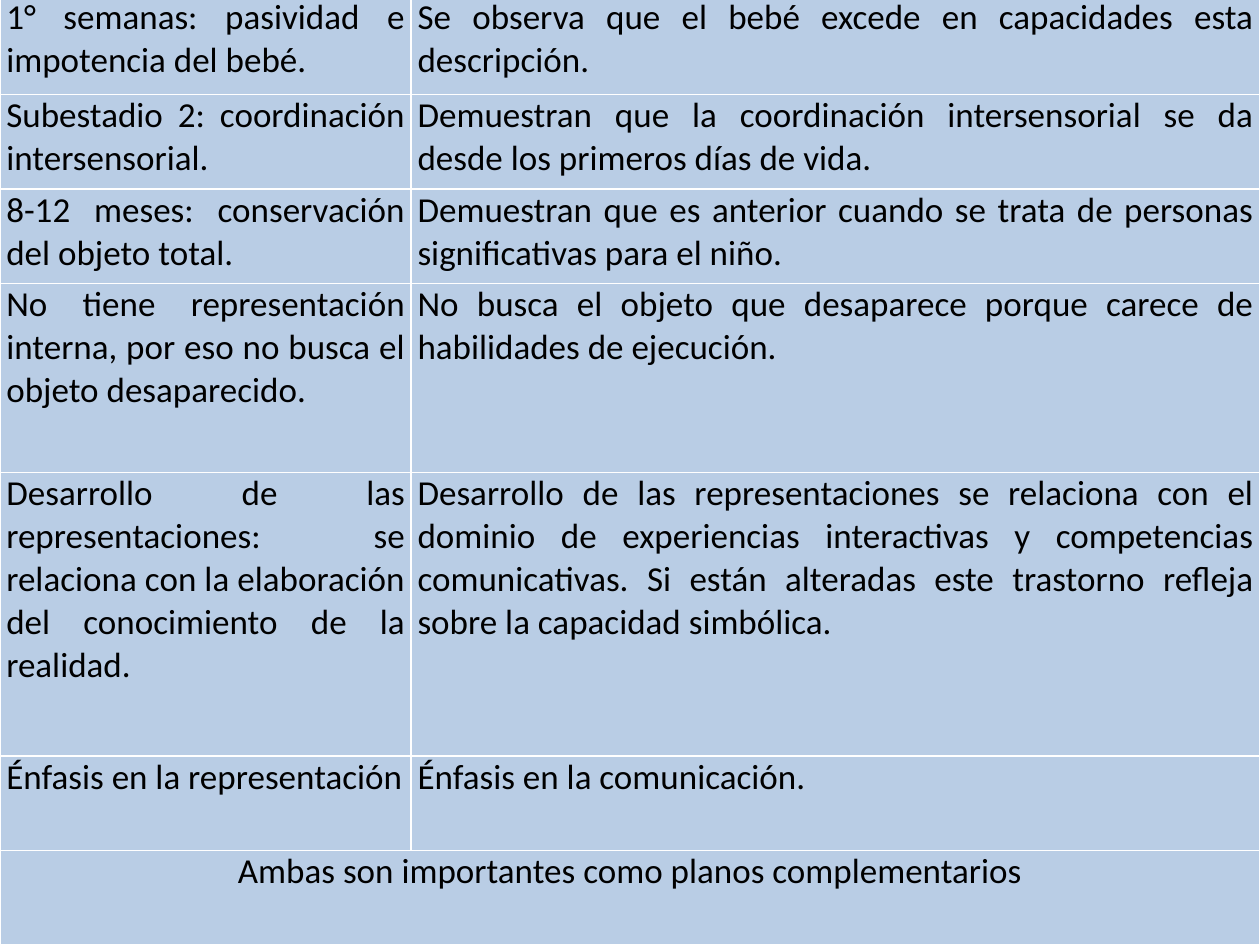
import pptx
import pptx.util
import pptx.dml.color
import pptx.enum.text
import pptx.oxml
import pptx.oxml.ns

Pt = pptx.util.Pt
Align = pptx.enum.text.PP_ALIGN

# Content: (left text, right text, height in row units)
COMPARISON = [
    ("1° semanas: pasividad e impotencia del bebé.",
     "Se observa que el bebé excede en capacidades esta descripción.", 1),
    ("Subestadio 2: coordinación intersensorial.",
     "Demuestran que la coordinación intersensorial se da desde los primeros días de vida.", 1),
    ("8-12 meses: conservación del objeto total.",
     "Demuestran que es anterior cuando se trata de personas significativas para el niño.", 1),
    ("No tiene representación interna, por eso no busca el objeto desaparecido.",
     "No busca el objeto que desaparece porque carece de habilidades de ejecución.", 2),
    ("Desarrollo de las representaciones: se relaciona con la elaboración del "
     "conocimiento de la realidad.",
     "Desarrollo de las representaciones se relaciona con el dominio de experiencias "
     "interactivas y competencias comunicativas. Si están alteradas este trastorno "
     "refleja sobre la capacidad simbólica.", 3),
    ("Énfasis en la representación", "Énfasis en la comunicación.", 1),
]
CONCLUSION = "Ambas son importantes como planos complementarios"

THEME = {"font": "Calibri", "size": 20, "text": "000000",
         "fill": "B9CDE5", "border": "FFFFFF", "border_width": 1}

# Layout in points
PAGE_WIDTH, PAGE_HEIGHT = 720, 540
OVERHANG = 2  # the first row starts this far above the page
ROW_UNIT = 54
LEFT_COLUMN = 235
CELL_FORMAT = {"margin_left": Pt(3.6), "margin_right": Pt(3.6),
               "margin_top": 0, "margin_bottom": 0}


def color(name):
    return pptx.dml.color.RGBColor.from_string(THEME[name])


def add_borders(cell):
    properties = cell._tc.get_or_add_tcPr()
    for position, side in enumerate(("lnL", "lnR", "lnT", "lnB")):
        line = pptx.oxml.parse_xml(
            f'<a:{side} {pptx.oxml.ns.nsdecls("a")} w="{Pt(THEME["border_width"])}">'
            f'<a:solidFill><a:srgbClr val="{THEME["border"]}"/></a:solidFill></a:{side}>')
        properties.insert(position, line)


def format_cell(cell):
    for name, value in CELL_FORMAT.items():
        setattr(cell, name, value)
    cell.fill.solid()
    cell.fill.fore_color.rgb = color("fill")
    add_borders(cell)


def write_cell(cell, text, alignment):
    para = cell.text_frame.paragraphs[0]
    para.alignment = alignment
    span = para.add_run()
    span.text = text
    font_format = {"name": THEME["font"], "size": Pt(THEME["size"]), "bold": False}
    for name, value in font_format.items():
        setattr(span.font, name, value)
    span.font.color.rgb = color("text")


def main():
    deck = pptx.Presentation()
    deck.slide_width, deck.slide_height = Pt(PAGE_WIDTH), Pt(PAGE_HEIGHT)
    page = deck.slides.add_slide(deck.slide_layouts[6])

    # Table grid
    heights = [units * ROW_UNIT for _, _, units in COMPARISON] + [ROW_UNIT]
    heights[0] += OVERHANG
    table = page.shapes.add_table(
        len(heights), 2, 0, Pt(-OVERHANG), Pt(PAGE_WIDTH), Pt(sum(heights))).table
    table.first_row = table.horz_banding = False
    for column, width in zip(table.columns, (LEFT_COLUMN, PAGE_WIDTH - LEFT_COLUMN)):
        column.width = Pt(width)
    for row, height in zip(table.rows, heights):
        row.height = Pt(height)
    for cell in table.iter_cells():
        format_cell(cell)

    # Compared statements
    for row_index, (left, right, _) in enumerate(COMPARISON):
        for column_index, text in enumerate((left, right)):
            write_cell(table.cell(row_index, column_index), text, Align.JUSTIFY)

    # Conclusion across both columns
    last = len(COMPARISON)
    table.cell(last, 0).merge(table.cell(last, 1))
    write_cell(table.cell(last, 0), CONCLUSION, Align.CENTER)

    deck.save("out.pptx")


if __name__ == "__main__":
    main()
